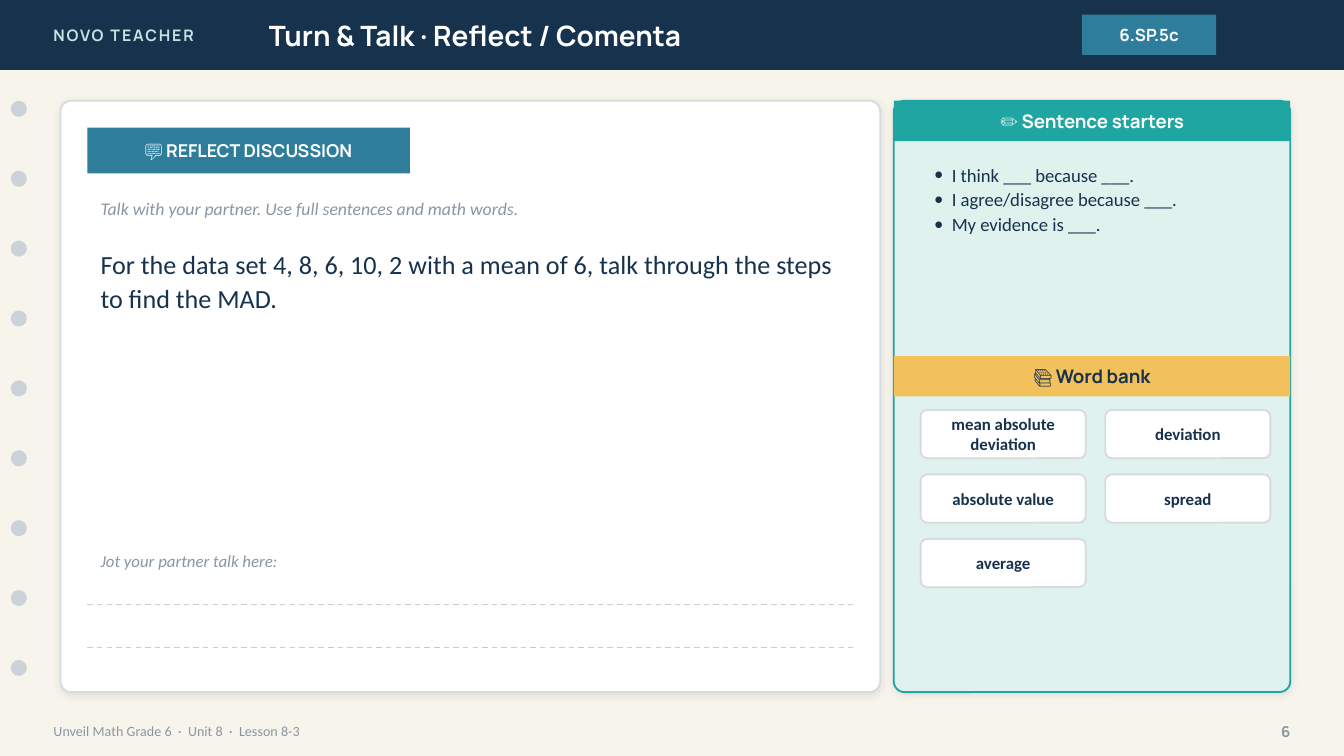
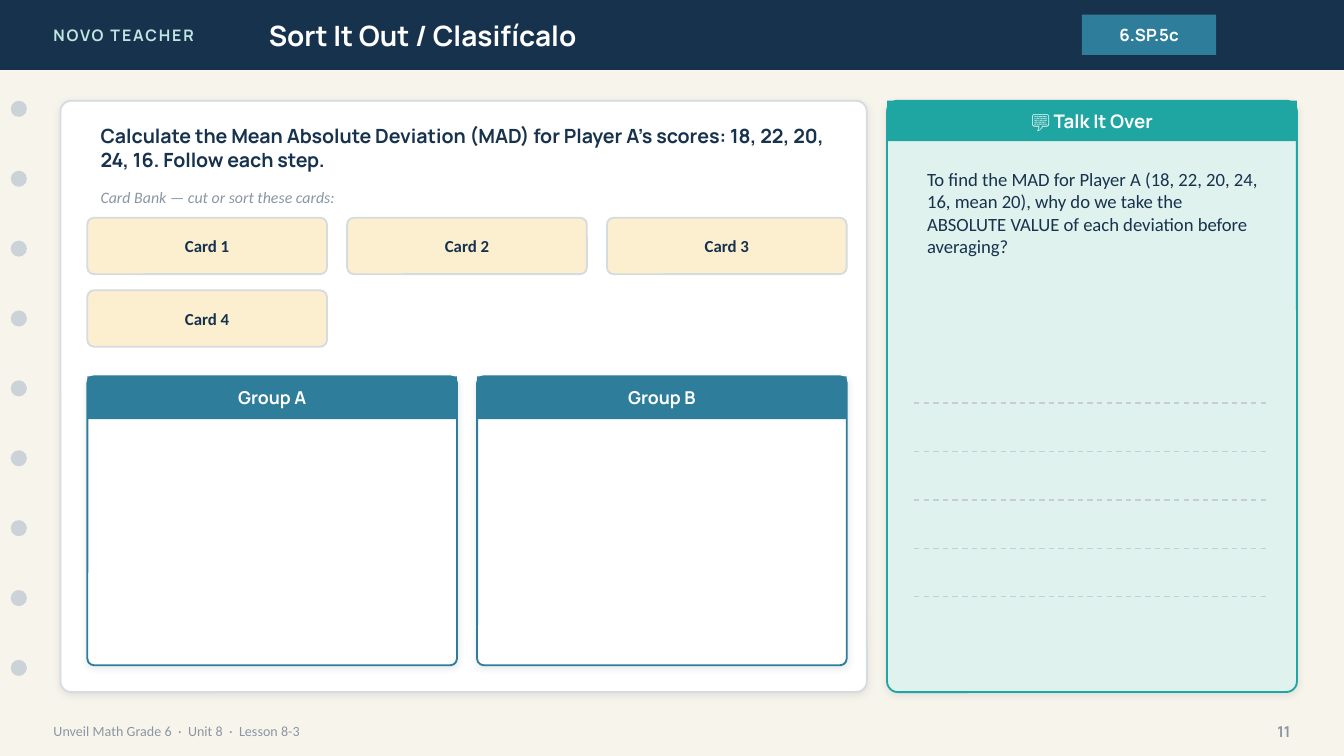
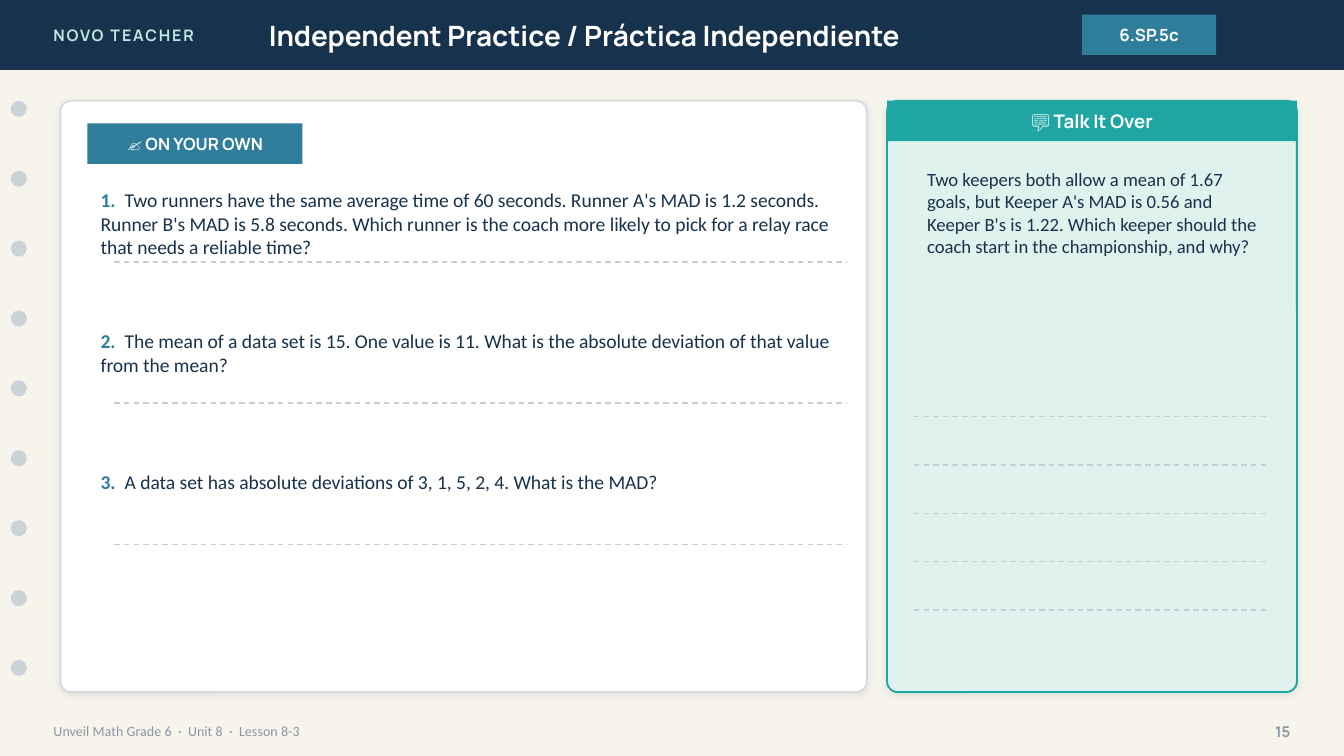
from lxml.etree import SubElement
from pptx import Presentation
from pptx.dml.color import RGBColor as Rgb
from pptx.enum.dml import MSO_LINE
from pptx.enum.shapes import MSO_CONNECTOR, MSO_SHAPE
from pptx.enum.text import MSO_ANCHOR as Anchor, MSO_AUTO_SIZE as Fit, PP_ALIGN as Align
from pptx.oxml.ns import qn
from pptx.util import Pt

NAVY = Rgb(0x17, 0x32, 0x4D)
BLUE = Rgb(0x2E, 0x7D, 0x9A)
TEAL = Rgb(0x1F, 0xA6, 0xA2)
MINT = Rgb(0xDF, 0xF2, 0xEE)
AQUA = Rgb(0xBF, 0xE6, 0xE2)
GOLD = Rgb(0xF2, 0xC1, 0x5B)
SAND = Rgb(0xFB, 0xEF, 0xD0)
CREAM = Rgb(0xF7, 0xF4, 0xEC)
WHITE = Rgb(0xFF, 0xFF, 0xFF)
GRAY = Rgb(0x8A, 0x96, 0xA3)
EDGE = Rgb(0xD6, 0xDB, 0xDF)
DASH = Rgb(0xC7, 0xCD, 0xD2)
HOLE = Rgb(0xCB, 0xD3, 0xD9)
HEAD, TEXT = "Manrope", "Calibri"
RECT, ROUND, OVAL = MSO_SHAPE.RECTANGLE, MSO_SHAPE.ROUNDED_RECTANGLE, MSO_SHAPE.OVAL


def box(page, kind, at, fill=None, line=None, curve=0, soft=False, anchor=Anchor.MIDDLE):
    """Place a preset shape, a text box (kind None) or a placeholder on top;
    return its first paragraph. curve is the corner radius, soft adds a shadow."""
    spot = [Pt(n) for n in at]
    if kind is None:
        shape = page.shapes.add_textbox(*spot)
    elif kind in (RECT, ROUND, OVAL):
        shape = page.shapes.add_shape(kind, *spot)
        shape.shadow.inherit = False
        shape.fill.solid()
        shape.fill.fore_color.rgb = fill
        if line:
            shape.line.color.rgb, shape.line.width = line, Pt(1)
        else:
            shape.line.fill.background()
        if curve:
            shape.adjustments[0] = curve / min(at[2:])
        if soft:
            glow = SubElement(shape._element.spPr.find(qn("a:effectLst")), qn("a:outerShdw"),
                              blurRad=str(Pt(4)), dist=str(Pt(1)), dir="5400000",
                              algn="ctr", rotWithShape="0")
            tint = SubElement(glow, qn("a:srgbClr"), val="1C2E42")
            SubElement(tint, qn("a:alpha"), val="10000")
    else:
        shape = kind
        shape.left, shape.top, shape.width, shape.height = spot
        page.shapes._spTree.append(shape._element)
    frame = shape.text_frame
    for key, val in dict(word_wrap=True, auto_size=Fit.NONE, vertical_anchor=anchor).items():
        setattr(frame, key, val)
    return frame.paragraphs[0]


def write(para, text, size, color, name=TEXT, align=Align.LEFT, **look):
    """Add a run to the paragraph and return it."""
    para.alignment = align
    run = para.add_run()
    run.text = text
    for key, val in dict(look, name=name, size=Pt(size)).items():
        setattr(run.font, key, val)
    run.font.color.rgb = color
    return run


label = dict(name=HEAD, bold=True, align=Align.CENTER)
chip = dict(size=9, color=NAVY, bold=True, align=Align.CENTER)
rules = []

prs = Presentation()
prs.slide_width, prs.slide_height = Pt(720), Pt(405)
back = prs.slide_master.background.fill
back.solid()
back.fore_color.rgb = CREAM

# Shared frame: band, holes, footer, main card and side panel
TOP, TALL = 54, 316.8
pages = []
for title, num, layout, wide, side, span, head in (
    ("Turn & Talk · Reflect / Comenta", "6", 1, 439.2, 478.8, 212.4, "✏️ Sentence starters"),
    ("Sort It Out / Clasifícalo", "11", 5, 432, 475.2, 219.6, "💬 Talk It Over"),
    ("Independent Practice / Práctica Independiente", "15", 5, 432, 475.2, 219.6,
     "💬 Talk It Over"),
):
    page = prs.slides.add_slide(prs.slide_layouts[layout])
    pages.append(page)
    box(page, RECT, (0, 0, 720, 37.5), NAVY)
    mark = write(box(page, None, (21.6, 0, 172.8, 37.5)), "NOVO TEACHER", 8.5, AQUA, HEAD,
                 bold=True)
    mark.font._element.set("spc", "100")
    write(box(page, page.shapes.title, (136.8, 0, 403.2, 37.5)), title, 15, WHITE, HEAD,
          bold=True)
    write(box(page, RECT, (579.6, 7.9, 72, 21.6), BLUE), "6.SP.5c", 9, WHITE, **label)
    for row in range(9):
        box(page, OVAL, (5.76, TOP + 37.44 * row, 8.64, 8.64), HOLE)
    write(box(page, None, (21.6, 381.6, 504, 20.2)),
          "Unveil Math Grade 6  ·  Unit 8  ·  Lesson 8-3", 7.5, GRAY)
    write(box(page, None, (662.4, 381.6, 36, 20.2)), num, 8, GRAY, HEAD, Align.RIGHT, bold=True)
    box(page, ROUND, (32.4, TOP, wide, TALL), WHITE, EDGE, 5.76, True)
    box(page, ROUND, (side, TOP, span, TALL), MINT, TEAL, 5.76, True)
    write(box(page, RECT, (side, TOP, span, 21.6), TEAL), head, 10, WHITE, **label)
talk, sort, solo = pages

# Turn and talk
LEFT = 46.8
write(box(talk, RECT, (LEFT, 68.4, 172.8, 24.5), BLUE), "💬 REFLECT DISCUSSION", 9.5, WHITE,
      **label)
write(box(talk, None, (LEFT, 100.8, 410.4, 21.6)),
      "Talk with your partner. Use full sentences and math words.", 9.5, GRAY, italic=True)
task = box(talk, None, (LEFT, 128.2, 410.4, 144), anchor=Anchor.TOP)
task.line_spacing = 1.08
write(task, "For the data set 4, 8, 6, 10, 2 with a mean of 6, talk through the steps "
      "to find the MAD.", 14, NAVY)
write(box(talk, None, (LEFT, 291.6, 410.4, 18)), "Jot your partner talk here:", 9, GRAY,
      italic=True)
rules += [(talk, LEFT, 457.2, y) for y in (324, 347)]

body = talk.placeholders[1]
para = box(talk, body, (493.2, 82.8, 187.2, 100.8), anchor=Anchor.TOP)
for num, text in enumerate(("I think ___ because ___.", "I agree/disagree because ___.",
                            "My evidence is ___.")):
    if num:
        para = body.text_frame.add_paragraph()
    props = para._p.get_or_add_pPr()
    props.set("marL", str(Pt(9.5)))
    props.set("indent", str(Pt(-9.5)))
    SubElement(props, qn("a:buFont"), typeface=TEXT)
    SubElement(props, qn("a:buChar"), char="•")
    para.space_before, para.line_spacing = Pt(0), 1.1
    write(para, text, 10, NAVY)

write(box(talk, RECT, (478.8, 190.8, 212.4, 21.6), GOLD), "📚 Word bank", 10, NAVY, **label)
for num, word in enumerate(("mean absolute deviation", "deviation", "absolute value",
                            "spread", "average")):
    row, col = divmod(num, 2)
    at = (493.2 + 98.9 * col, 219.6 + 34.56 * row, 88.5, 25.9)
    write(box(talk, ROUND, at, WHITE, EDGE, 3.6), word, **chip)

# Sort it out
write(box(sort, None, (LEFT, 64.8, 403.2, 28.8)),
      "Calculate the Mean Absolute Deviation (MAD) for Player A's scores: "
      "18, 22, 20, 24, 16. Follow each step.", 10.5, NAVY, HEAD, bold=True)
write(box(sort, None, (LEFT, 97.2, 403.2, 17.3)), "Card Bank — cut or sort these cards:",
      8.5, GRAY, italic=True)
for num in range(4):
    row, col = divmod(num, 3)
    at = (LEFT + 139.2 * col, 116.64 + 38.88 * row, 128.4, 30.24)
    write(box(sort, ROUND, at, SAND, EDGE, 3.6), f"Card {num + 1}", **chip)
for col, name in enumerate("AB"):
    x = LEFT + 208.8 * col
    box(sort, ROUND, (x, 201.6, 198, 154.8), WHITE, BLUE, 3.6, True)
    write(box(sort, RECT, (x, 201.6, 198, 23), BLUE), f"Group {name}", 9.5, WHITE, **label)

# Independent practice
write(box(solo, RECT, (LEFT, 66.2, 115.2, 21.6), BLUE), "✍️ ON YOUR OWN", 9, WHITE, **label)
for num, text in enumerate((
    "Two runners have the same average time of 60 seconds. Runner A's MAD is 1.2 seconds. "
    "Runner B's MAD is 5.8 seconds. Which runner is the coach more likely to pick for a "
    "relay race that needs a reliable time?",
    "The mean of a data set is 15. One value is 11. What is the absolute deviation of that "
    "value from the mean?",
    "A data set has absolute deviations of 3, 1, 5, 2, 4. What is the MAD?",
)):
    y = 97.2 + 75.6 * num
    para = box(solo, None, (LEFT, y, 406.8, 36), anchor=Anchor.TOP)
    tabs = SubElement(para._p.get_or_add_pPr(), qn("a:tabLst"))
    SubElement(tabs, qn("a:tab"), pos=str(Pt(12.9)), algn="l")
    write(para, f"{num + 1}.\t", 10.5, BLUE, bold=True)
    write(para, text, 10.5, NAVY, bold=False)
    rules.append((solo, 61.2, 453.6, y + 43.2))

# Talk prompts with writing lines
for page, start, tall, text in (
    (sort, 216, 108, "To find the MAD for Player A (18, 22, 20, 24, 16, mean 20), why do we "
     "take the ABSOLUTE VALUE of each deviation before averaging?"),
    (solo, 223.2, 122.4, "Two keepers both allow a mean of 1.67 goals, but Keeper A's MAD is "
     "0.56 and Keeper B's is 1.22. Which keeper should the coach start in the championship, "
     "and why?"),
):
    write(box(page, None, (489.6, 86.4, 194.4, tall), anchor=Anchor.TOP), text, 10, NAVY)
    rules += [(page, 489.6, 680.4, start + 25.92 * row) for row in range(5)]

for page, x, end, y in rules:
    rule = page.shapes.add_connector(MSO_CONNECTOR.STRAIGHT, Pt(x), Pt(y), Pt(end), Pt(y))
    SubElement(rule._element.spPr, qn("a:effectLst"))
    rule.line.color.rgb = DASH
    for key, val in dict(width=Pt(0.75), dash_style=MSO_LINE.DASH).items():
        setattr(rule.line, key, val)

prs.save("out.pptx")
